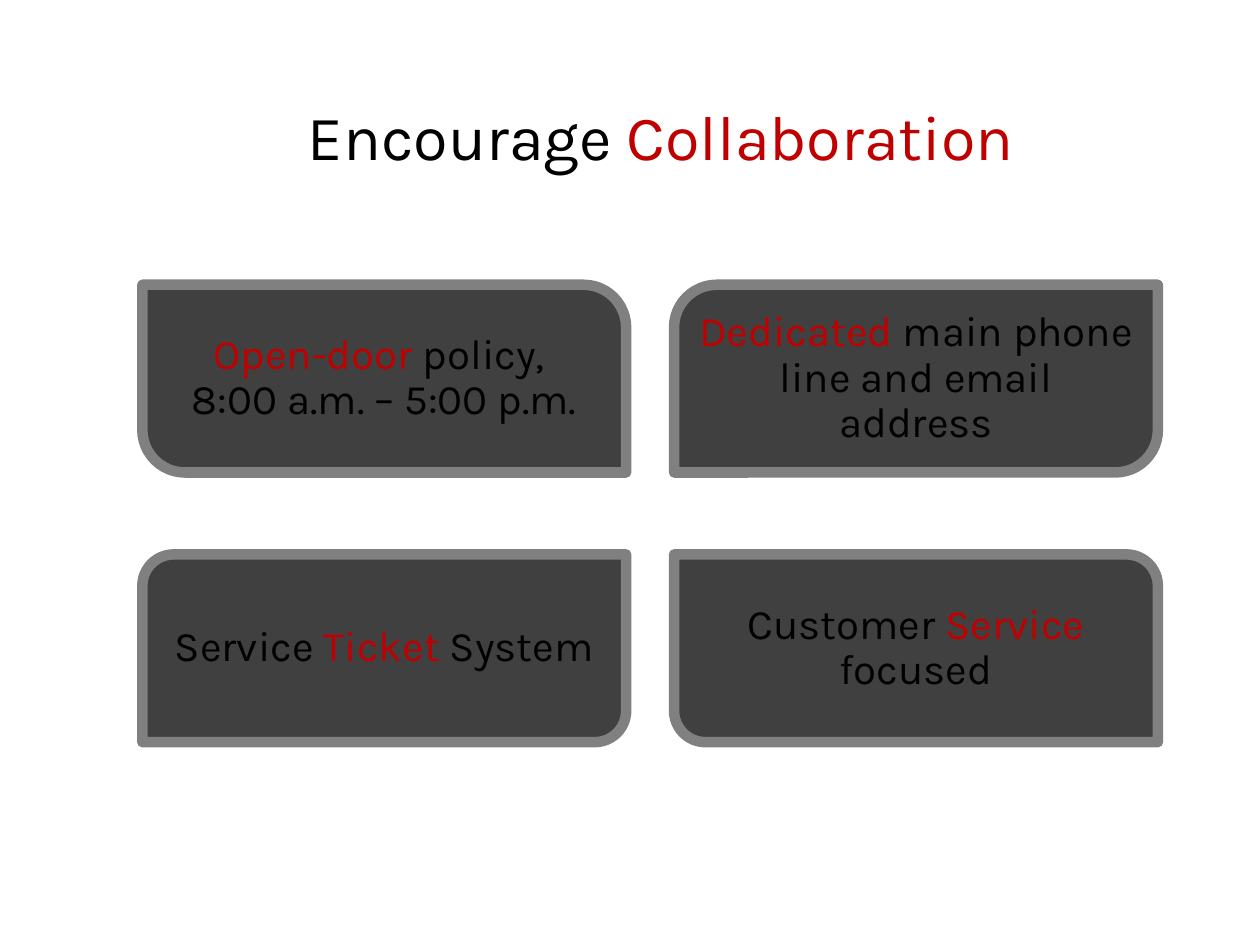
from pptx import Presentation
from pptx.dml.color import RGBColor
from pptx.enum.shapes import MSO_SHAPE
from pptx.enum.text import MSO_ANCHOR as Anchor, PP_ALIGN as Align
from pptx.util import Inches, Pt

BLACK, RED, DARK, GRAY = "000000", "C00000", "404040", "808080"


def color(value):
    return RGBColor.from_string(value)


def write(shape, runs, size, line_spacing=1.0):
    """Write centred (text, colour) runs; a newline in a text is a line break."""
    frame = shape.text_frame
    frame.word_wrap = True
    frame.vertical_anchor = Anchor.MIDDLE
    paragraph = frame.paragraphs[0]
    paragraph.alignment = Align.CENTER
    paragraph.line_spacing = line_spacing
    for text, run_color in runs:
        for index, line in enumerate(text.split("\n")):
            if index:
                paragraph.add_line_break()
            run = paragraph.add_run()
            run.text = line
            run.font.name = "Karla"
            run.font.size = Pt(size)
            run.font.color.rgb = color(run_color)


presentation = Presentation()
presentation.slide_width = Inches(10)
presentation.slide_height = Inches(7.5)
slide = presentation.slides.add_slide(presentation.slide_layouts[6])

# Title
title = slide.shapes.add_textbox(Inches(0.49), Inches(0.38), Inches(9.51), Inches(1.39))
write(title, [("Encourage ", BLACK), ("Collaboration", RED)], size=36)

# Two by two cards: corner roundings (one diagonal, the other) and text
cards = [
    ((0, 0.227), [("Open-door ", RED), ("policy, \n8:00 a.m. – 5:00 p.m.", BLACK)]),
    ((0.227, 0), [("Dedicated ", RED), ("main phone line and email address", BLACK)]),
    ((0.167, 0), [("Service ", BLACK), ("Ticket ", RED), ("System", BLACK)]),
    ((0, 0.167), [("Customer ", BLACK), ("Service ", RED), ("focused", BLACK)]),
]
for index, (roundings, runs) in enumerate(cards):
    row, column = divmod(index, 2)
    card = slide.shapes.add_shape(
        MSO_SHAPE.ROUND_2_DIAG_RECTANGLE,
        Inches(1.13 + 4.22 * column), Inches(2.26 + 2.14 * row),
        Inches(3.84), Inches(1.49))
    card.adjustments[0], card.adjustments[1] = roundings
    card.shadow.inherit = False
    card.fill.solid()
    card.fill.fore_color.rgb = color(DARK)
    card.line.color.rgb = color(GRAY)
    card.line.width = Pt(6)
    write(card, runs, size=24, line_spacing=0.9)

presentation.save("out.pptx")
